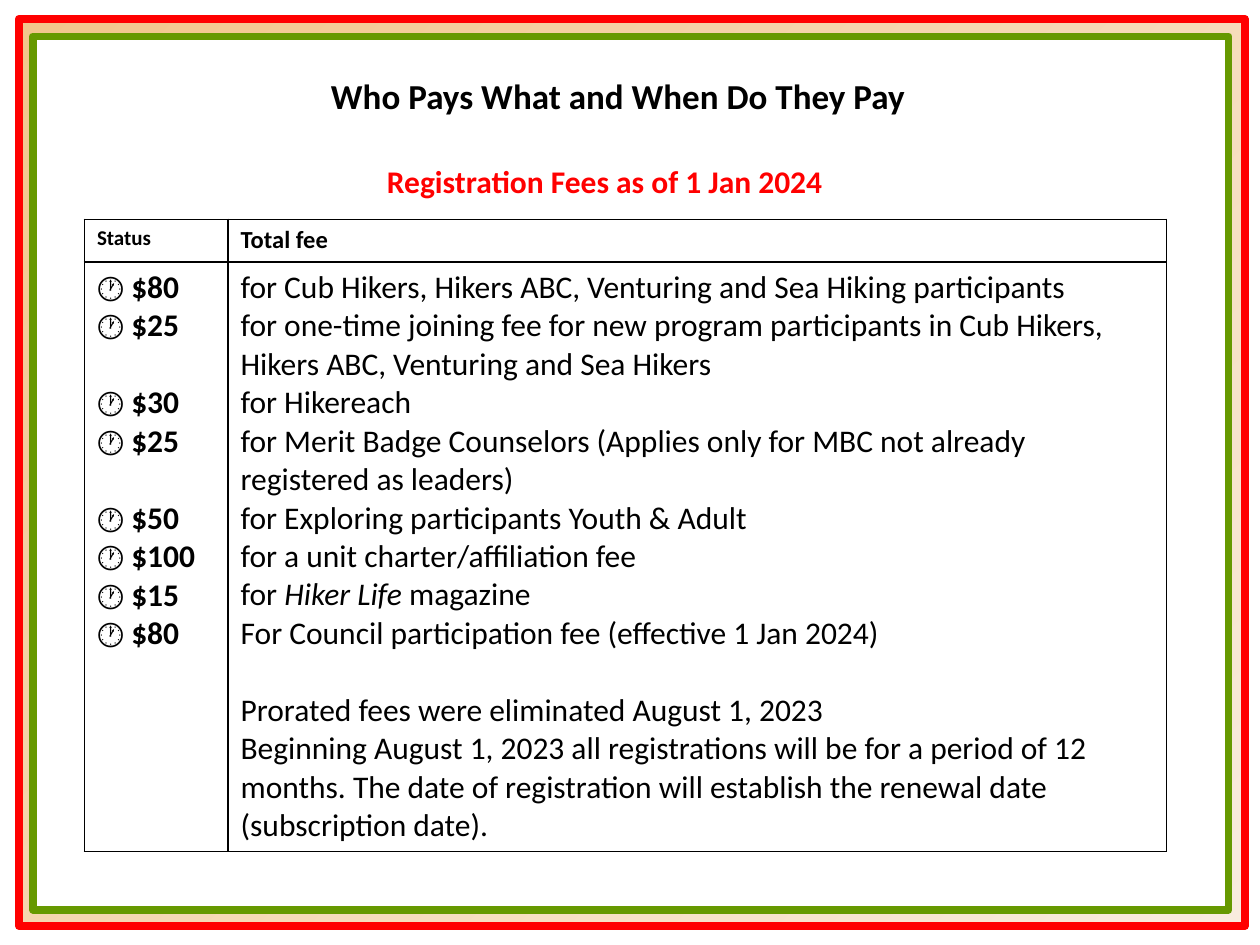
from lxml.etree import SubElement
from pptx import Presentation
from pptx.dml.color import RGBColor
from pptx.enum.shapes import MSO_SHAPE as Shape
from pptx.enum.text import PP_ALIGN as Align
from pptx.oxml.ns import qn
from pptx.util import Inches, Pt

COLORS = {
    "black": "000000",
    "white": "FFFFFF",
    "red": "FF0000",
    "green": "669900",
    "sand": "F2C68C",
    "cream": "F9ECDE",
}


def color(name):
    return RGBColor.from_string(COLORS[name])


def add_text(paragraph, text, size=18, bold=False, italic=False, fill="black"):
    run = paragraph.add_run()
    run.text = text
    run.font.name = "Calibri"
    run.font.size = Pt(size)
    run.font.bold = bold
    run.font.italic = italic
    run.font.color.rgb = color(fill)


presentation = Presentation()
presentation.slide_width = Inches(10)
presentation.slide_height = Inches(7.5)
slide = presentation.slides.add_slide(presentation.slide_layouts[6])

frames = [
    ((0.15, 0.15, 9.73, 7.2), "red"),
    ((0.26, 0.29, 9.49, 6.93), "green"),
]
for box, line in frames:
    frame = slide.shapes.add_shape(Shape.RECTANGLE, *map(Inches, box))
    frame.shadow.inherit = False
    frame.line.color.rgb = color(line)
    frame.line.width = Pt(4.5)
    if line == "red":
        frame.fill.gradient()
        frame.fill.gradient_angle = 315
        for stop, name in zip(frame.fill.gradient_stops, ("sand", "cream")):
            stop.color.rgb = color(name)
    else:
        frame.fill.solid()
        frame.fill.fore_color.rgb = color("white")

fees = [
    ("$80", [("for Cub Hikers, Hikers ABC, Venturing and Sea Hiking participants", False)], 1),
    ("$25", [("for one-time joining fee for new program participants in Cub Hikers, "
              "Hikers ABC, Venturing and Sea Hikers", False)], 2),
    ("$30", [("for Hikereach", False)], 1),
    ("$25", [("for Merit Badge Counselors (Applies only for MBC not already "
              "registered as leaders)", False)], 2),
    ("$50", [("for Exploring participants Youth & Adult", False)], 1),
    ("$100", [("for a unit charter/affiliation fee", False)], 1),
    ("$15", [("for ", False), ("Hiker Life ", True), ("magazine", False)], 1),
    ("$80", [("For Council participation fee (effective 1 Jan 2024)", False)], 1),
]
notes = [
    "Prorated fees were eliminated August 1, 2023",
    "Beginning August 1, 2023 all registrations will be for a period of 12 months. "
    "The date of registration will establish the renewal date (subscription date).",
]
line_height = 22

table = slide.shapes.add_table(
    2, 2, Inches(0.67), Inches(1.74), Inches(8.59), Inches(5.02)
).table
for column, width in zip(table.columns, (1.14, 7.45)):
    column.width = Inches(width)
for row, height in zip(table.rows, (0.34, 4.68)):
    row.height = Inches(height)

for cell in table.iter_cells():
    cell.fill.background()
    properties = cell._tc.get_or_add_tcPr()
    for index, side in enumerate(("a:lnL", "a:lnR", "a:lnT", "a:lnB")):
        border = SubElement(properties, qn(side), w=str(Pt(1)))
        fill = SubElement(border, qn("a:solidFill"))
        SubElement(fill, qn("a:srgbClr"), val=COLORS["black"])
        properties.insert(index, border)

for column, (heading, size) in enumerate((("Status", 12), ("Total fee", 14))):
    add_text(table.cell(0, column).text_frame.paragraphs[0], heading, size=size, bold=True)

amounts = table.cell(1, 0).text_frame
details = table.cell(1, 1).text_frame
for index, (amount, parts, lines) in enumerate(fees):
    paragraph = amounts.add_paragraph() if index else amounts.paragraphs[0]
    paragraph.space_after = Pt(line_height * (lines - 1))
    add_text(paragraph, "🕐 ")
    add_text(paragraph, amount, bold=True)
    paragraph = details.add_paragraph() if index else details.paragraphs[0]
    for text, italic in parts:
        add_text(paragraph, text, italic=italic)

for index, note in enumerate(notes):
    paragraph = details.add_paragraph()
    paragraph.space_before = Pt(0 if index else line_height)
    add_text(paragraph, note)

headings = [
    ("Who Pays What and When Do They Pay", (2.39, 0.54, 5.03, 0.44), 20, "black"),
    ("Registration Fees as of 1 Jan 2024", (2.3, 1.24, 5, 0.4), 18, "red"),
]
for text, box, size, fill in headings:
    heading = slide.shapes.add_textbox(*map(Inches, box))
    heading.text_frame.word_wrap = True
    paragraph = heading.text_frame.paragraphs[0]
    paragraph.alignment = Align.CENTER
    add_text(paragraph, text, size=size, bold=True, fill=fill)

presentation.save("out.pptx")
